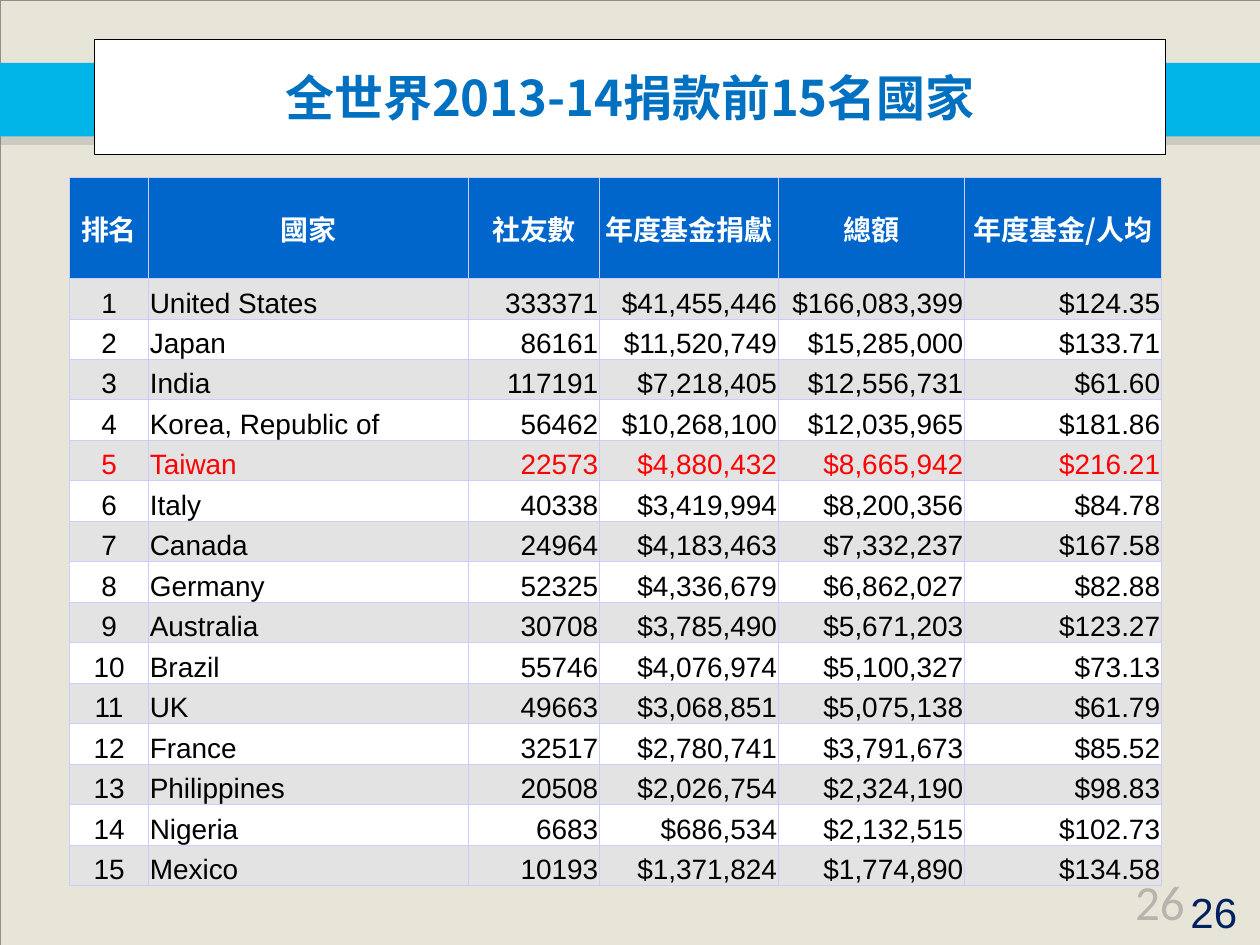
from lxml import etree
from pptx import Presentation
from pptx.dml.color import RGBColor
from pptx.enum import shapes, text
from pptx.oxml import ns
from pptx.util import Pt

COLORS = {
    "background": "E6E5D8", "frame": "958D85", "band": "01B4E7", "shadow": "808080",
    "white": "FFFFFF", "black": "000000", "title": "0070C0", "header": "0066CC",
    "stripe": "E3E3E3", "border": "CCCCFF", "highlight": "FF0000",
    "number": "002060", "faded": "B7B3AE",
}
LEFT, CENTER, RIGHT = text.PP_ALIGN.LEFT, text.PP_ALIGN.CENTER, text.PP_ALIGN.RIGHT
MIDDLE, BOTTOM = text.MSO_ANCHOR.MIDDLE, text.MSO_ANCHOR.BOTTOM

HEADINGS = ["排名", "國家", "社友數", "年度基金捐獻", "總額", "年度基金/人均"]
COUNTRIES = [
    ("United States", "333371", "$41,455,446", "$166,083,399", "$124.35"),
    ("Japan", "86161", "$11,520,749", "$15,285,000", "$133.71"),
    ("India", "117191", "$7,218,405", "$12,556,731", "$61.60"),
    ("Korea, Republic of", "56462", "$10,268,100", "$12,035,965", "$181.86"),
    ("Taiwan", "22573", "$4,880,432", "$8,665,942", "$216.21"),
    ("Italy", "40338", "$3,419,994", "$8,200,356", "$84.78"),
    ("Canada", "24964", "$4,183,463", "$7,332,237", "$167.58"),
    ("Germany", "52325", "$4,336,679", "$6,862,027", "$82.88"),
    ("Australia", "30708", "$3,785,490", "$5,671,203", "$123.27"),
    ("Brazil", "55746", "$4,076,974", "$5,100,327", "$73.13"),
    ("UK", "49663", "$3,068,851", "$5,075,138", "$61.79"),
    ("France", "32517", "$2,780,741", "$3,791,673", "$85.52"),
    ("Philippines", "20508", "$2,026,754", "$2,324,190", "$98.83"),
    ("Nigeria", "6683", "$686,534", "$2,132,515", "$102.73"),
    ("Mexico", "10193", "$1,371,824", "$1,774,890", "$134.58"),
]
COLUMN_WIDTHS = [45.2, 182.9, 74.8, 102.2, 106.4, 112.5]
COLUMN_ALIGNMENTS = [CENTER, LEFT, RIGHT, RIGHT, RIGHT, RIGHT]
HEADER_HEIGHT, ROW_HEIGHT = 57.6, 23.14


def rgb(name):
    return RGBColor.from_string(COLORS[name])


def add_element(parent, tag, **attributes):
    return etree.SubElement(parent, ns.qn(tag), attributes)


def write(frame, content, font, size, color, alignment=LEFT, bold=False):
    paragraph = frame.paragraphs[0]
    paragraph.alignment = alignment
    run = paragraph.add_run()
    run.text = content
    run.font.name = font
    run.font.size = Pt(size)
    run.font.bold = bold
    run.font.color.rgb = rgb(color)
    add_element(run.font._element, "a:ea", typeface=font)


def add_rectangle(slide, box, fill=None, line=None, line_width=0.75):
    shape = slide.shapes.add_shape(shapes.MSO_SHAPE.RECTANGLE, *map(Pt, box))
    shape.shadow.inherit = False
    if fill:
        shape.fill.solid()
        shape.fill.fore_color.rgb = rgb(fill)
    else:
        shape.fill.background()
    if line:
        shape.line.color.rgb = rgb(line)
        shape.line.width = Pt(line_width)
    else:
        shape.line.fill.background()
    return shape


def add_band(slide, box):
    band = add_rectangle(slide, box, fill="band")
    effects = band._element.spPr.find(ns.qn("a:effectLst"))
    shadow = add_element(effects, "a:outerShdw", blurRad="0", dist=str(Pt(4.8)),
                         dir="5400000", algn="t", rotWithShape="0")
    color = add_element(shadow, "a:srgbClr", val=COLORS["shadow"])
    add_element(color, "a:alpha", val="25000")


def add_title(slide, box, content):
    title = add_rectangle(slide, box, fill="white", line="black")
    title.text_frame.word_wrap = True
    title.text_frame.vertical_anchor = MIDDLE
    write(title.text_frame, content, "Noto Sans CJK SC", 28, "title", CENTER, True)


def add_page_number(slide, box, number, font, size, color, alignment, anchor, wrap):
    frame = slide.shapes.add_textbox(*map(Pt, box)).text_frame
    frame.word_wrap = wrap
    frame.vertical_anchor = anchor
    write(frame, number, font, size, color, alignment)


def format_cell(cell, fill, anchor):
    cell.margin_left = cell.margin_right = cell.margin_top = Pt(0.75)
    cell.margin_bottom = 0
    cell.vertical_anchor = anchor
    properties = cell._tc.get_or_add_tcPr()
    for side in ("L", "R", "T", "B"):
        line = add_element(properties, f"a:ln{side}", w=str(Pt(0.5)))
        line_fill = add_element(line, "a:solidFill")
        add_element(line_fill, "a:srgbClr", val=COLORS["border"])
    cell.fill.solid()
    cell.fill.fore_color.rgb = rgb(fill)


def add_ranking(slide, left, top):
    height = HEADER_HEIGHT + ROW_HEIGHT * len(COUNTRIES)
    table = slide.shapes.add_table(
        len(COUNTRIES) + 1, len(HEADINGS),
        Pt(left), Pt(top), Pt(sum(COLUMN_WIDTHS)), Pt(height)).table
    for column, width in zip(table.columns, COLUMN_WIDTHS):
        column.width = Pt(width)
    table.rows[0].height = Pt(HEADER_HEIGHT)
    for index, heading in enumerate(HEADINGS):
        cell = table.cell(0, index)
        format_cell(cell, "header", MIDDLE)
        write(cell.text_frame, heading, "Noto Sans CJK TC", 16, "white", CENTER, True)
    for rank, country in enumerate(COUNTRIES, 1):
        table.rows[rank].height = Pt(ROW_HEIGHT)
        fill = "stripe" if rank % 2 else "white"
        color = "highlight" if country[0] == "Taiwan" else "black"
        for index, value in enumerate((str(rank), *country)):
            cell = table.cell(rank, index)
            format_cell(cell, fill, BOTTOM)
            write(cell.text_frame, value, "Arial", 16, color, COLUMN_ALIGNMENTS[index])


def main():
    presentation = Presentation()
    presentation.slide_width, presentation.slide_height = Pt(720), Pt(540)
    slide = presentation.slides.add_slide(presentation.slide_layouts[6])
    slide.background.fill.solid()
    slide.background.fill.fore_color.rgb = rgb("background")
    add_page_number(slide, (673.2, 503.3, 44, 36), "26", "Arial", 24, "number",
                    LEFT, text.MSO_ANCHOR.TOP, False)
    add_rectangle(slide, (0, 0, 720, 540), line="frame", line_width=0.13)
    add_band(slide, (-6, 36, 732, 42))
    add_page_number(slide, (516, 500.5, 168, 28.8), "26", "Calibri", 28, "faded",
                    RIGHT, MIDDLE, True)
    add_title(slide, (54, 22.5, 612, 66), "全世界2013-14捐款前15名國家")
    add_ranking(slide, 39.7, 101.5)
    presentation.save("out.pptx")


if __name__ == "__main__":
    main()
